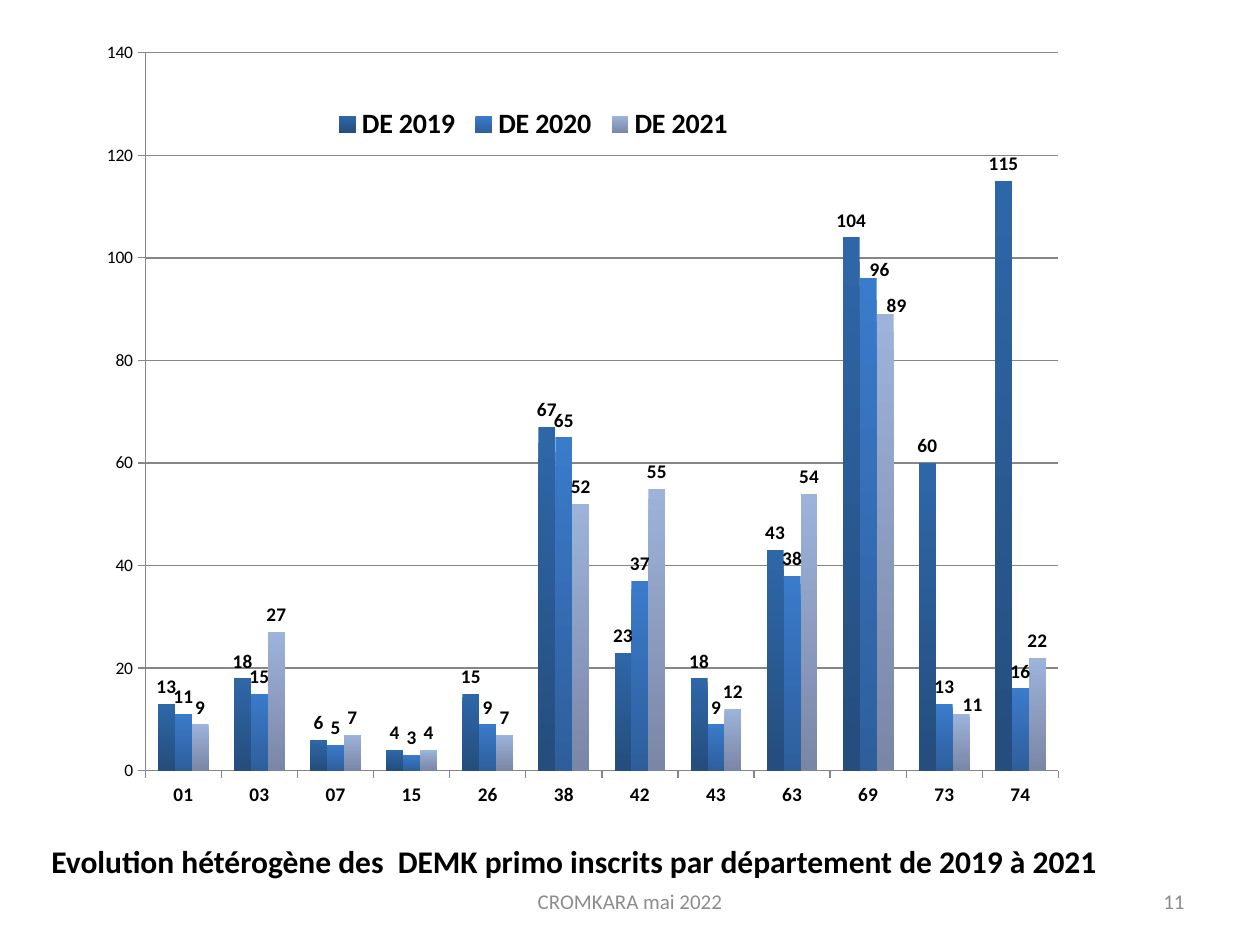
from lxml import etree
from pptx import Presentation, util as u
from pptx.chart.data import CategoryChartData
from pptx.dml.color import RGBColor
from pptx.enum import chart as ch, text
from pptx.oxml import ns

WIDTH, HEIGHT = 10, 7.5
COLORS = {"ink": "000000", "muted": "8C8C8C", "axis": "868686"}
DEPARTMENTS = ["01", "03", "07", "15", "26", "38", "42", "43", "63", "69", "73", "74"]
YEARS = {
    "DE 2019": ([13, 18, 6, 4, 15, 67, 23, 18, 43, 104, 60, 115], ("2E67A8", "254D7D"), []),
    "DE 2020": ([11, 15, 5, 3, 9, 65, 37, 9, 38, 96, 13, 16], ("3A7BCB", "2E5F9C"), [9]),
    "DE 2021": ([9, 27, 7, 4, 7, 52, 55, 12, 54, 89, 11, 22], ("9DB3DA", "7A86A6"), [9, 10]),
}


def set_font(font, size, color="ink", bold=False):
    """Apply the slide's typeface with a size, colour and weight."""
    font.name, font.size, font.bold = "Calibri", u.Pt(size), bold
    font.color.rgb = RGBColor.from_string(COLORS[color])


def manual_layout(**settings):
    """Return a c:layout element with the given manual settings."""
    layout = etree.Element(ns.qn("c:layout"))
    manual = etree.SubElement(layout, ns.qn("c:manualLayout"))
    for tag, value in settings.items():
        etree.SubElement(manual, ns.qn(f"c:{tag}")).set("val", str(value))
    return layout


def replace_layout(parent, index, layout):
    """Put a layout at an index of its parent, dropping any earlier one."""
    for old in parent.findall(ns.qn("c:layout")):
        parent.remove(old)
    parent.insert(index, layout)


def add_line_of_text(slide, box, wording, size, color, align, anchor, bold=False):
    """Write one line of text in a box."""
    frame = slide.shapes.add_textbox(*map(u.Inches, box)).text_frame
    frame.word_wrap, frame.vertical_anchor = True, anchor
    line = frame.paragraphs[0]
    line.text, line.alignment = wording, align
    set_font(line.runs[0].font, size, color, bold)


def style_axis(axis, size, bold):
    """Format the labels, line and ticks of an axis."""
    set_font(axis.tick_labels.font, size, bold=bold)
    axis.major_tick_mark = ch.XL_TICK_MARK.OUTSIDE
    axis.minor_tick_mark = ch.XL_TICK_MARK.NONE
    lines = [axis.format.line]
    if axis.has_major_gridlines:
        lines.append(axis.major_gridlines.format.line)
    for line in lines:
        line.color.rgb = RGBColor.from_string(COLORS["axis"])
        line.width = u.Pt(0.75)


def style_year(series, shades, shifted):
    """Shade one year's columns and label them, nudging the crowded labels."""
    series.smooth = False if hasattr(series, "smooth") else None
    fill = series.format.fill
    fill.gradient()
    fill.gradient_angle = 270
    for stop, shade in zip(fill.gradient_stops, shades):
        stop.color.rgb = RGBColor.from_string(shade)
    labels = series.data_labels
    labels.show_value, labels.number_format = True, "0"
    labels.number_format_is_linked = False
    labels.position = ch.XL_LABEL_POSITION.OUTSIDE_END
    set_font(labels.font, 11, bold=True)
    for index in shifted:
        label = series.points[index].data_label
        set_font(label.font, 11, bold=True)
        label.position = ch.XL_LABEL_POSITION.OUTSIDE_END
    for label in series.data_labels._element.findall(ns.qn("c:dLbl")):
        replace_layout(label, 1, manual_layout(x=0.01, y=0.01))


def add_department_chart(slide, box):
    """Draw the columns of each department over the three years."""
    data = CategoryChartData()
    data.categories = DEPARTMENTS
    for year, (counts, _, _) in YEARS.items():
        data.add_series(year, counts)
    chart = slide.shapes.add_chart(
        ch.XL_CHART_TYPE.COLUMN_CLUSTERED, *map(u.Inches, box), data).chart
    chart.has_title = False
    set_font(chart.font, 10)
    plot = chart.plots[0]
    plot.gap_width, plot.overlap, plot.vary_by_categories = 150, 0, False
    for series, (_, shades, shifted) in zip(plot.series, YEARS.values()):
        style_year(series, shades, shifted)

    counts_axis = chart.value_axis
    counts_axis.minimum_scale, counts_axis.maximum_scale = 0, 140
    counts_axis.major_unit = 20
    style_axis(counts_axis, 10, False)
    style_axis(chart.category_axis, 11, True)

    chart.has_legend = True
    legend = chart.legend
    legend.position, legend.include_in_layout = ch.XL_LEGEND_POSITION.RIGHT, False
    set_font(legend.font, 16, bold=True)
    replace_layout(legend._element, 1, manual_layout(
        xMode="edge", yMode="edge", x=0.21, y=0.09, w=0.36, h=0.06))
    replace_layout(plot._element.getparent(), 0, manual_layout(
        layoutTarget="inner", xMode="edge", yMode="edge", x=0.05, y=0.03, w=0.8, h=0.9))


def add_footer(slide, box):
    """Place the centred source and the page number in the footer band."""
    left, top, width, height = box
    middle = text.MSO_ANCHOR.MIDDLE
    source_width, page_width = width * 0.35, width * 0.26
    add_line_of_text(slide, (left + (width - source_width) / 2, top, source_width, height),
                     "CROMKARA mai 2022", 12, "muted", text.PP_ALIGN.CENTER, middle)
    add_line_of_text(slide, (left + width - page_width, top, page_width, height),
                     "11", 12, "muted", text.PP_ALIGN.RIGHT, middle)


def main():
    """Build and save the slide."""
    deck = Presentation()
    deck.slide_width, deck.slide_height = u.Inches(WIDTH), u.Inches(HEIGHT)
    slide = deck.slides.add_slide(deck.slide_layouts[6])
    add_department_chart(slide, (0.7, 0.23, 9.06, 6.33))
    add_line_of_text(
        slide, (0.31, 6.41, 9.38, 0.62),
        "Evolution hétérogène des  DEMK primo inscrits par département de 2019 à 2021",
        18, "ink", text.PP_ALIGN.LEFT, text.MSO_ANCHOR.BOTTOM, True)
    add_footer(slide, (WIDTH * 0.05, 6.95, WIDTH * 0.9, 0.4))
    deck.save("out.pptx")


if __name__ == "__main__":
    main()
